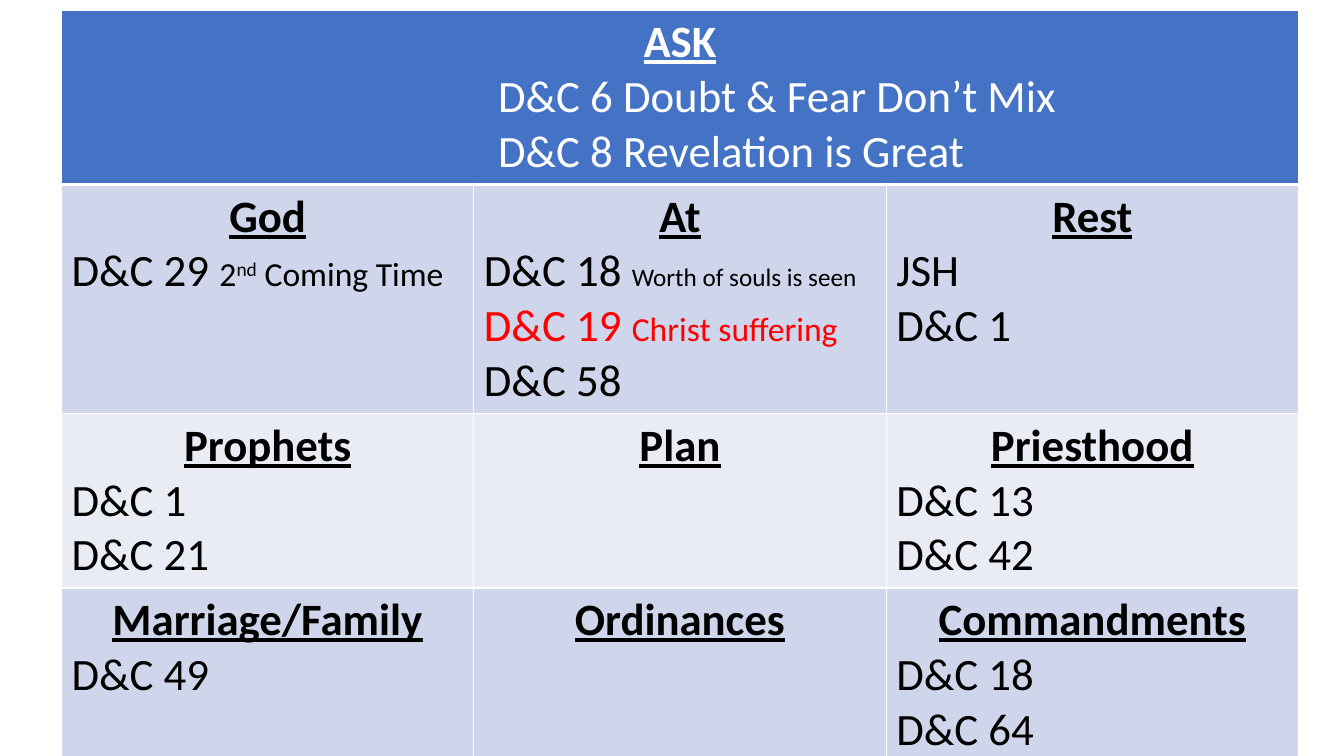
from lxml import etree
from pptx import Presentation
from pptx.dml.color import RGBColor
from pptx.enum.text import PP_ALIGN
from pptx.oxml.ns import qn
from pptx.util import Inches, Pt

COLORS = {
    "header": "4472C4",
    "dark_band": "CFD5EA",
    "light_band": "E9EBF5",
    "white": "FFFFFF",
    "black": "000000",
    "red": "FF0000",
}
FONT = "Calibri"
COLUMNS = 3
ROW_HEIGHT = 1.67
ASK_INDENT = 4.23

# Each line is a list of runs: (text, size, color, baseline), the last three optional.
ASK = ("ASK", [[("D&C 6 Doubt & Fear Don’t Mix",)], [("D&C 8 Revelation is Great",)]])
TOPICS = [
    [
        ("God", [[("D&C 29 ",), ("2", 24), ("nd", 24, "black", 30000), (" Coming Time", 24)]]),
        ("At", [
            [("D&C 18 ",), ("Worth of souls is seen", 18)],
            [("D&C 19 ", 32, "red"), ("Christ suffering", 24, "red")],
            [("D&C 58",)],
        ]),
        ("Rest", [[("JSH",)], [("D&C 1",)]]),
    ],
    [
        ("Prophets", [[("D&C 1",)], [("D&C 21",)]]),
        ("Plan", []),
        ("Priesthood", [[("D&C 13",)], [("D&C 42",)]]),
    ],
    [
        ("Marriage/Family", [[("D&C 49",)]]),
        ("Ordinances", []),
        ("Commandments", [[("D&C 18",)], [("D&C 64",)]]),
    ],
]


def add_run(paragraph, text, size=32, color="black", baseline=0, heading=False):
    run = paragraph.add_run()
    run.text = text
    font = run.font
    font.name = FONT
    font.size = Pt(size)
    font.bold = heading
    font.underline = heading
    font.color.rgb = RGBColor.from_string(COLORS[color])
    if baseline:
        font._element.set("baseline", str(baseline))


def set_borders(cell, bottom_width):
    properties = cell._tc.get_or_add_tcPr()
    widths = {"a:lnL": 1, "a:lnR": 1, "a:lnT": 1, "a:lnB": bottom_width}
    for position, (side, width) in enumerate(widths.items()):
        line = etree.Element(qn(side), w=str(Pt(width)))
        fill = etree.SubElement(line, qn("a:solidFill"))
        etree.SubElement(fill, qn("a:srgbClr"), val=COLORS["white"])
        properties.insert(position, line)


def fill_cell(cell, topic, fill, color="black", indent=0, bottom_width=1):
    """Write a centred heading with its references below, and style the cell."""
    heading, references = topic
    cell.fill.solid()
    cell.fill.fore_color.rgb = RGBColor.from_string(COLORS[fill])
    set_borders(cell, bottom_width)
    title = cell.text_frame.paragraphs[0]
    title.alignment = PP_ALIGN.CENTER
    add_run(title, heading, color=color, heading=True)
    for reference in references:
        paragraph = cell.text_frame.add_paragraph()
        paragraph.alignment = PP_ALIGN.LEFT
        if indent:
            properties = paragraph._p.get_or_add_pPr()
            properties.set("marL", str(Inches(indent)))
            properties.set("indent", "0")
        for text, *style in reference:
            add_run(paragraph, text, *(style or [32, color]))


def add_topic_table(slide):
    row_count = len(TOPICS) + 1
    table = slide.shapes.add_table(
        row_count, COLUMNS, Inches(0.61), Inches(0.1),
        Inches(12.27), Inches(ROW_HEIGHT * row_count),
    ).table
    for row in table.rows:
        row.height = Inches(ROW_HEIGHT)

    ask_cell = table.cell(0, 0)
    ask_cell.merge(table.cell(0, COLUMNS - 1))
    fill_cell(ask_cell, ASK, "header", "white", ASK_INDENT, bottom_width=3)

    for row, topics in enumerate(TOPICS, start=1):
        band = "dark_band" if row % 2 else "light_band"
        for column, topic in enumerate(topics):
            fill_cell(table.cell(row, column), topic, band)


def main():
    presentation = Presentation()
    presentation.slide_width = Inches(13.33)
    presentation.slide_height = Inches(7.5)
    slide = presentation.slides.add_slide(presentation.slide_layouts[6])
    add_topic_table(slide)
    presentation.save("out.pptx")


if __name__ == "__main__":
    main()
